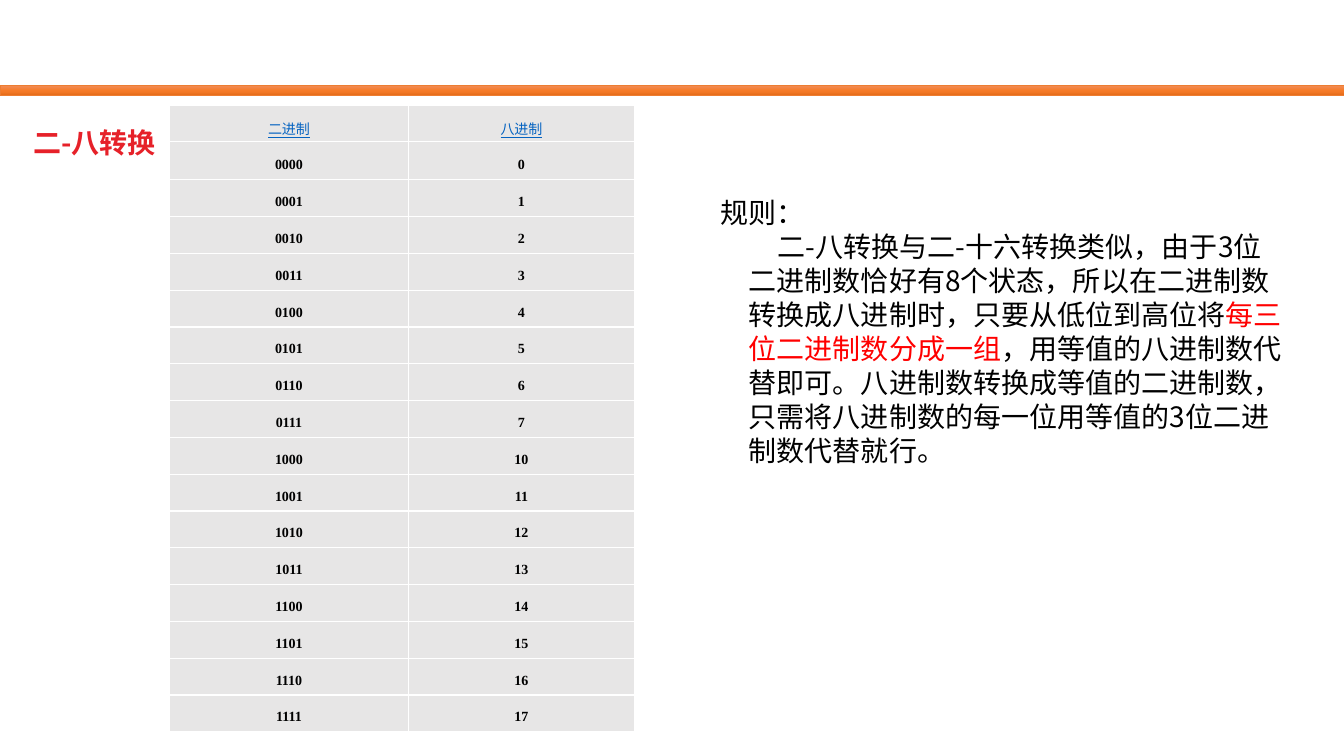
from copy import deepcopy

from lxml.etree import SubElement
from pptx import Presentation
from pptx.dml.color import RGBColor as RGB
from pptx.enum.shapes import MSO_SHAPE as SHAPE
from pptx.enum.text import MSO_ANCHOR as ANCHOR, PP_ALIGN as ALIGN
from pptx.oxml.ns import qn
from pptx.util import Inches, Pt

COLORS = {
    "black": "000000", "white": "FFFFFF", "title": "E62129", "accent": "FF0000",
    "heading": "0563C1", "cell": "E7E6E6", "bar_line": "ED7D31",
    "bar_top": "F18C57", "bar_middle": "F67B28", "bar_bottom": "E56C19",
}
SANS, SERIF = "Noto Sans CJK SC", "Times New Roman"
GRID_COLUMNS, GRID_ROWS = 40, 30


class SlideBuilder:
    """Draws styled elements on one slide, measured in grid columns and rows."""

    def __init__(self, presentation):
        self.column = presentation.slide_width / GRID_COLUMNS
        self.row = presentation.slide_height / GRID_ROWS
        self.slide = presentation.slides.add_slide(presentation.slide_layouts[6])

    def box(self, left, top, width, height):
        return (round(left * self.column), round(top * self.row),
                round(width * self.column), round(height * self.row))

    def color(self, name):
        return RGB.from_string(COLORS[name])

    def style(self, paragraph, size, color, name=SANS, bold=False, underline=False):
        font = paragraph.font
        font.size, font.bold, font.underline = Pt(size), bold, underline
        font.color.rgb = self.color(color)
        font.name = name
        defaults = paragraph._p.pPr.find(qn("a:defRPr"))
        SubElement(defaults, qn("a:ea")).set("typeface", name)

    def bar(self, left, top, width, height, stops):
        shape = self.slide.shapes.add_shape(SHAPE.RECTANGLE, *self.box(left, top, width, height))
        shape.shadow.inherit = False
        shape.fill.gradient()
        shape.fill.gradient_angle = 270
        stop_list = shape._element.spPr.find(".//" + qn("a:gsLst"))
        stop_list.append(deepcopy(stop_list[-1]))
        for stop, (position, color) in zip(shape.fill.gradient_stops, stops):
            stop.position = position
            stop.color.rgb = self.color(color)
        shape.line.color.rgb = self.color("bar_line")
        shape.line.width = Pt(0.5)

    def text(self, left, top, width, height, paragraphs, color="black", bold=False, margin=0):
        shape = self.slide.shapes.add_textbox(*self.box(left, top, width, height))
        frame = shape.text_frame
        frame.word_wrap = True
        for index, (indent, runs) in enumerate(paragraphs):
            paragraph = frame.add_paragraph() if index else frame.paragraphs[0]
            paragraph.line_spacing = Pt(24.2)
            properties = paragraph._p.get_or_add_pPr()
            properties.set("marL", str(round(margin * self.column)))
            properties.set("indent", str(round(indent * self.column)))
            self.style(paragraph, 20, color, bold=bold)
            for words, run_color in runs:
                run = paragraph.add_run()
                run.text = words
                if run_color:
                    run.font.color.rgb = self.color(run_color)

    def cell(self, cell, words, **font):
        cell.margin_top = cell.margin_bottom = 0
        cell.vertical_anchor = ANCHOR.MIDDLE
        properties = cell._tc.get_or_add_tcPr()
        for side in ("a:lnL", "a:lnR", "a:lnT", "a:lnB"):
            line = SubElement(properties, qn(side), w=str(Pt(1)))
            fill = SubElement(line, qn("a:solidFill"))
            SubElement(fill, qn("a:srgbClr"), val=COLORS["white"])
        cell.fill.solid()
        cell.fill.fore_color.rgb = self.color("cell")
        cell.text = words
        paragraph = cell.text_frame.paragraphs[0]
        paragraph.alignment = ALIGN.CENTER
        paragraph.line_spacing = 1.5
        self.style(paragraph, 10, **font)

    def table(self, left, top, widths, heights, records):
        frame = self.slide.shapes.add_table(
            len(heights), len(widths), *self.box(left, top, sum(widths), sum(heights)))
        table = frame.table
        for column, width in zip(table.columns, widths):
            column.width = round(width * self.column)
        for row, height in zip(table.rows, heights):
            row.height = round(height * self.row)
        heading = {"color": "heading", "underline": True}
        value = {"color": "black", "name": SERIF, "bold": True}
        for row, record in enumerate(records):
            for column, words in enumerate(record):
                self.cell(table.cell(row, column), words, **(value if row else heading))


def main():
    presentation = Presentation()
    presentation.slide_width, presentation.slide_height = Inches(13.33), Inches(7.5)
    builder = SlideBuilder(presentation)

    builder.bar(0, 3.4, GRID_COLUMNS, 0.4,
                [(0, "bar_top"), (0.5, "bar_middle"), (1, "bar_bottom")])
    builder.text(0.69, 4.76, 4.35, 1.76, [(0, [("二-八转换", None)])], color="title", bold=True)
    builder.text(20.25, 7.56, 18.21, 11.16, [
        (-0.84, [("规则：", None)]),
        (0.86, [
            ("二-八转换与二-十六转换类似，由于3位二进制数恰好有8个状态，"
             "所以在二进制数转换成八进制时，只要从低位到高位将", None),
            ("每三位二进制数分成一组", "accent"),
            ("，用等值的八进制数代替即可。八进制数转换成等值的二进制数，"
             "只需将八进制数的每一位用等值的3位二进制数代替就行。", None),
        ]),
    ], margin=1.74)

    records = [("二进制", "八进制")] + [(f"{n:04b}", f"{n:o}") for n in range(16)]
    heights = [1.42, 1.52] + [1.46] * 15
    builder.table(5.04, 4.2, [7.12, 6.72], heights, records)

    presentation.save("out.pptx")


if __name__ == "__main__":
    main()
